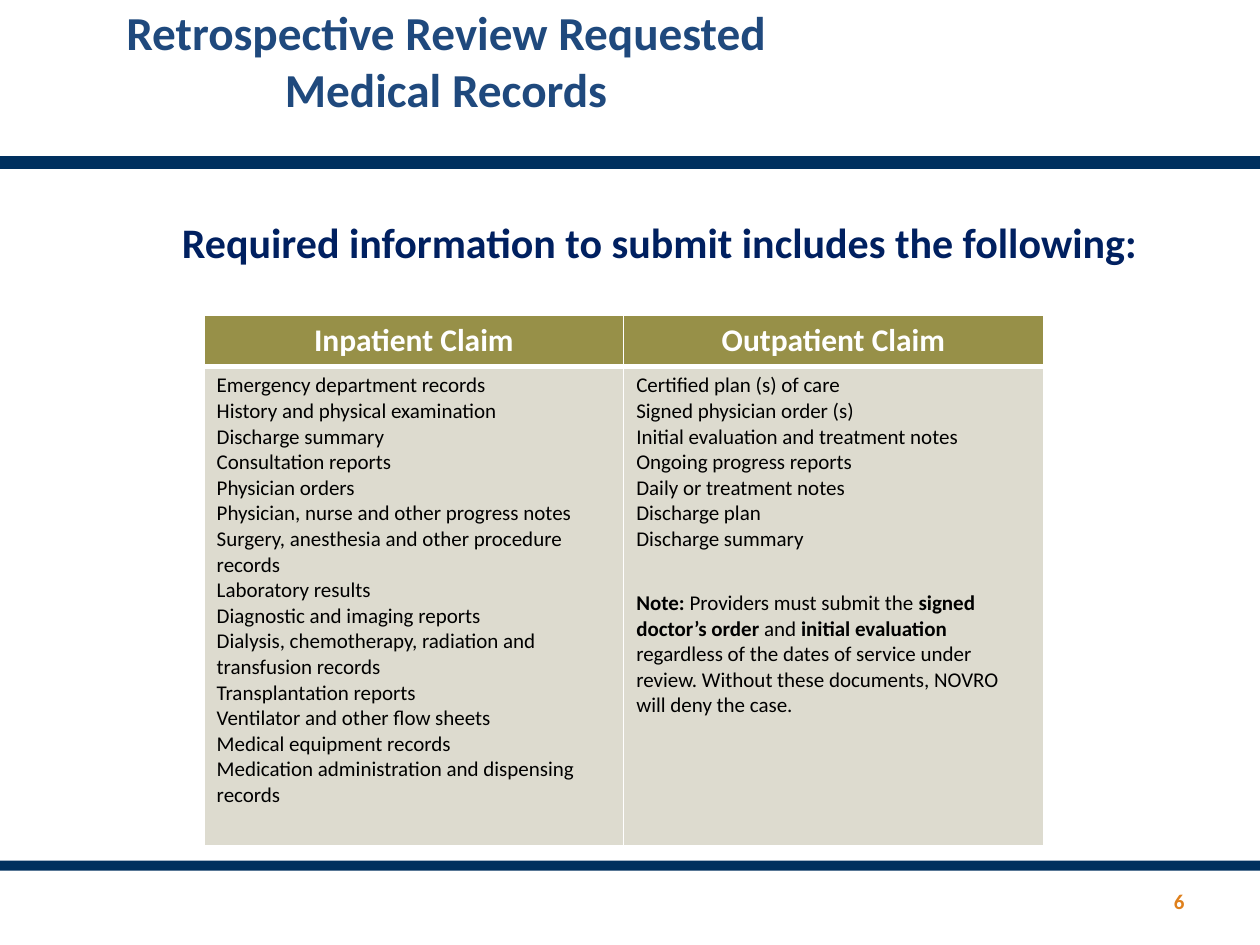
"""Build the slide on medical records requested for retrospective review."""
from dataclasses import dataclass

import pptx
import pptx.dml.color
import pptx.enum.shapes
import pptx.enum.text
import pptx.oxml
import pptx.oxml.ns
import pptx.util
from pptx.util import Inches

ALIGN = pptx.enum.text.PP_ALIGN
ANCHOR = pptx.enum.text.MSO_ANCHOR
NAVY = "00305E"
WHITE = "FFFFFF"


@dataclass
class Bar:
    top: float
    edge: float


@dataclass
class Claim:
    head: str
    items: list[str]
    note: str = ""


BARS = [Bar(1.25, 2), Bar(6.83, 0)]
CLAIMS = [
    Claim("Inpatient Claim", [
        "Emergency department records",
        "History and physical examination",
        "Discharge summary",
        "Consultation reports",
        "Physician orders",
        "Physician, nurse and other progress notes",
        "Surgery, anesthesia and other procedure records",
        "Laboratory results",
        "Diagnostic and imaging reports",
        "Dialysis, chemotherapy, radiation and transfusion records",
        "Transplantation reports",
        "Ventilator and other flow sheets",
        "Medical equipment records",
        "Medication administration and dispensing records",
    ]),
    Claim("Outpatient Claim", [
        "Certified plan (s) of care",
        "Signed physician order (s)",
        "Initial evaluation and treatment notes",
        "Ongoing progress reports",
        "Daily or treatment notes",
        "Discharge plan",
        "Discharge summary",
    ], "*Note:* Providers must submit the *signed doctor’s order* and "
       "*initial evaluation* regardless of the dates of service under review. "
       "Without these documents, NOVRO will deny the case."),
]


def paint(target, tint: str) -> None:
    """Give a fill or a font a solid colour."""
    if hasattr(target, "solid"):
        target.solid()
        target = target.fore_color
    else:
        target = target.color
    target.rgb = pptx.dml.color.RGBColor.from_string(tint)


def write(para, text: str, *, size: float, tint: str = "000000",
          bold: bool = False, align=ALIGN.LEFT, before: float = 0) -> None:
    """Fill a paragraph; parts between asterisks switch weight."""
    para.alignment = align
    para.space_before = pptx.util.Pt(before)
    for place, part in enumerate(text.split("*")):
        if part:
            run = para.add_run()
            run.text = part
            run.font.name = "Calibri"
            run.font.size = pptx.util.Pt(size)
            run.font.bold = bold != (place % 2 == 1)
            paint(run.font, tint)


def move(shape, left: float, top: float, width: float, height: float) -> None:
    """Place a shape, in inches."""
    shape.left, shape.top = Inches(left), Inches(top)
    shape.width, shape.height = Inches(width), Inches(height)


def draw_bar(slide, bar: Bar) -> None:
    """Draw a band across the slide."""
    shape = slide.shapes.add_shape(
        pptx.enum.shapes.MSO_SHAPE.RECTANGLE,
        0, Inches(bar.top), Inches(10), Inches(0.08))
    shape.shadow.inherit = False
    paint(shape.fill, NAVY)
    if bar.edge:
        paint(shape.line.fill, NAVY)
        shape.line.width = pptx.util.Pt(bar.edge)
    else:
        shape.line.fill.background()


def style(cell, tint: str, top: float, base: float) -> None:
    """Set the white borders and the fill of a cell."""
    props = cell._tc.get_or_add_tcPr()
    for side, width in zip("LRTB", (1, 1, top, base)):
        props.append(pptx.oxml.parse_xml(
            f'<a:ln{side} {pptx.oxml.ns.nsdecls("a")} w="{pptx.util.Pt(width)}">'
            f'<a:solidFill><a:srgbClr val="{WHITE}"/></a:solidFill></a:ln{side}>'))
    paint(cell.fill, tint)


def draw_table(slide, claims: list[Claim]) -> None:
    """Draw one column for each claim."""
    table = slide.shapes.add_table(
        2, len(claims), Inches(1.62), Inches(2.5), Inches(6.66), Inches(4.21)).table
    table.rows[0].height, table.rows[1].height = Inches(0.41), Inches(3.8)
    for col, claim in enumerate(claims):
        table.columns[col].width = Inches(3.33)
        head, cell = table.cell(0, col), table.cell(1, col)
        style(head, "979048", 1, 3)
        style(cell, "DDDBCF", 3, 1)
        write(head.text_frame.paragraphs[0], claim.head, size=18, tint=WHITE,
              bold=True, align=ALIGN.CENTER)
        frame = cell.text_frame
        for row, item in enumerate(claim.items):
            para = frame.add_paragraph() if row else frame.paragraphs[0]
            write(para, item, size=12)
        if claim.note:
            write(frame.add_paragraph(), claim.note, size=12, before=22)


def main() -> None:
    """Build and save the slide."""
    deck = pptx.Presentation()
    deck.slide_width, deck.slide_height = Inches(10), Inches(7.5)
    slide = deck.slides.add_slide(deck.slide_layouts[1])
    for bar in BARS:
        draw_bar(slide, bar)

    title, body = slide.placeholders
    move(title, 0.5, 0.08, 6.08, 1.25)
    move(body, 0.5, 1.67, 8.92, 5.25)
    for shape in (title, body):
        shape.text_frame.auto_size = pptx.enum.text.MSO_AUTO_SIZE.NONE
    frame = title.text_frame
    frame.vertical_anchor = ANCHOR.MIDDLE
    frame.margin_top, frame.margin_bottom = 0, Inches(0.45)
    write(frame.paragraphs[0], "Retrospective Review Requested Medical Records",
          size=27, tint="1F497D", bold=True, align=ALIGN.CENTER)

    para = body.text_frame.paragraphs[0]
    props = para._p.get_or_add_pPr()
    props.set("marL", str(Inches(0.55)))
    props.set("indent", "0")
    props.append(pptx.oxml.parse_xml(f'<a:buNone {pptx.oxml.ns.nsdecls("a")}/>'))
    write(para, "Required information to submit includes the following:",
          size=24, tint="002060", bold=True, align=ALIGN.CENTER)

    draw_table(slide, CLAIMS)
    page = slide.shapes.add_textbox(
        Inches(7.17), Inches(6.95), Inches(2.33), Inches(0.4))
    page.text_frame.word_wrap = True
    page.text_frame.vertical_anchor = ANCHOR.MIDDLE
    write(page.text_frame.paragraphs[0], "6", size=12, tint="DF801C",
          bold=True, align=ALIGN.RIGHT)
    deck.save("out.pptx")


if __name__ == "__main__":
    main()
